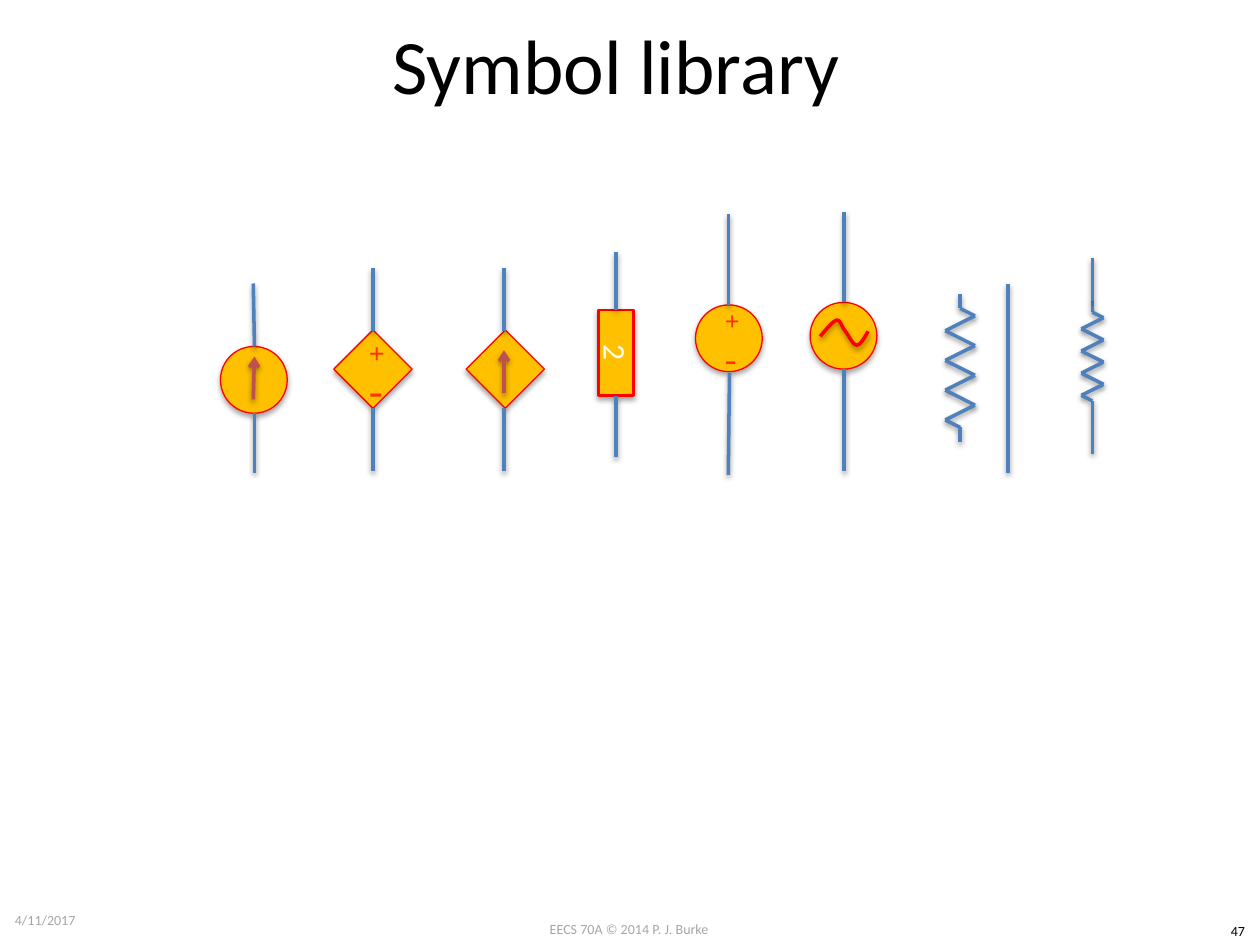
"""Build the slide showing a library of circuit symbols."""
import itertools

import lxml.etree
import pptx
import pptx.dml.color
import pptx.enum.shapes
import pptx.enum.text
import pptx.oxml.ns
import pptx.util

Inches = pptx.util.Inches
Pt = pptx.util.Pt
SHAPE = pptx.enum.shapes.MSO_SHAPE
ALIGN = pptx.enum.text.PP_ALIGN
ANCHOR = pptx.enum.text.MSO_ANCHOR
qn = pptx.oxml.ns.qn

COLORS = {
    "black": "000000", "grey": "A6A6A6", "white": "FFFFFF", "body": "FFC000",
    "outline": "FF0000", "sign": "FF3300", "lead": "4F81BD", "current": "C0504D",
}
BODIES = {
    "circle": (SHAPE.OVAL, 0.53, 0.53, 0, 0.75),
    "diamond": (SHAPE.RECTANGLE, 0.44, 0.44, 45, 0.75),
    "box": (SHAPE.RECTANGLE, 0.68, 0.28, 90, 1.5),
}
SYMBOLS = [
    {"body": "circle", "center": (2.015, 3.015),
     "arrow": (2.01, 3.17, 2.02, 2.83),
     "leads": [(2.01, 2.25, 2.02, 2.75), (2.02, 3.75, 2.02, 3.28)]},
    {"body": "diamond", "center": (2.96, 2.93),
     "signs": [("+", 2.63, 16, True), ("-", 2.92, 24, False)],
     "leads": [(2.96, 2.13, 2.96, 2.63), (2.96, 3.74, 2.96, 3.24)]},
    {"body": "diamond", "center": (4.01, 2.93),
     "arrow": (4, 3.12, 4, 2.78),
     "leads": [(4, 2.13, 4, 2.63), (4, 3.74, 4, 3.24)]},
    {"body": "circle", "center": (5.785, 2.685),
     "signs": [("+", 2.38, 14.8, True), ("-", 2.67, 20, False)],
     "leads": [(5.78, 1.7, 5.78, 2.42), (5.78, 3.77, 5.79, 2.96)]},
    {"body": "circle", "center": (6.695, 2.665),
     "wave": [(6.51, 2.67), (6.56, 2.61), (6.61, 2.55), (6.64, 2.54),
              (6.67, 2.53), (6.68, 2.6), (6.71, 2.63),
              (6.74, 2.67), (6.77, 2.74), (6.8, 2.74),
              (6.83, 2.74), (6.86, 2.68), (6.89, 2.63)],
     "leads": [(6.7, 1.68, 6.7, 2.4), (6.7, 3.74, 6.7, 2.93)]},
    {"resistor": (7.62, 2.33, 1.18), "leads": []},
    {"body": "box", "center": (4.89, 2.8), "label": "2", "joins": (1, 3),
     "leads": [(4.89, 2, 4.89, 2.46), (4.89, 3.63, 4.89, 3.14)]},
    {"resistor": (8.67, 2.39, 0.88),
     "leads": [(8.67, 2.05, 8.67, 2.39), (8.67, 3.6, 8.67, 3.27)]},
]
WIRE = (8, 3.75, 8, 2.25)
CAPTIONS = [
    ("EECS 70A © 2014 P. J. Burke", (3.83, 7.26, 2.33, 0.24), 8, "grey", ALIGN.CENTER, ANCHOR.TOP),
    ("47", (9.65, 7.27, 0.35, 0.24), 8, "black", ALIGN.CENTER, ANCHOR.TOP),
    ("Symbol library", (0.39, -0.12, 9, 1.25), 44, "black", ALIGN.CENTER, ANCHOR.MIDDLE),
    ("4/11/2017", (0.02, 7.1, 2.33, 0.4), 8, "grey", ALIGN.LEFT, ANCHOR.MIDDLE),
]


def rgb(name):
    return pptx.dml.color.RGBColor.from_string(COLORS[name])


def add_shadow(part, alpha, distance):
    properties = part._element.spPr
    effects = properties.find(qn("a:effectLst"))
    if effects is None:
        effects = lxml.etree.SubElement(properties, qn("a:effectLst"))
    shadow = lxml.etree.SubElement(
        effects, qn("a:outerShdw"), blurRad=str(Pt(3.1)),
        dist=str(Pt(distance)), dir="5400000", rotWithShape="0")
    tint = lxml.etree.SubElement(shadow, qn("a:srgbClr"), val=COLORS["black"])
    lxml.etree.SubElement(tint, qn("a:alpha"), val=str(alpha * 1000))


def write(part, text, size, color, font="Calibri", align=ALIGN.CENTER,
          anchor=ANCHOR.MIDDLE, bold=False):
    frame = part.text_frame
    frame.word_wrap = True
    frame.vertical_anchor = anchor
    paragraph = frame.paragraphs[0]
    paragraph.text = text
    paragraph.alignment = align
    paragraph.font.name = font
    paragraph.font.size = Pt(size)
    paragraph.font.bold = bold
    paragraph.font.color.rgb = rgb(color)


def add_line(shapes, ends, color="lead", arrow=False, body=None, site=None):
    x1, y1, x2, y2 = map(Inches, ends)
    line = shapes.add_connector(pptx.enum.shapes.MSO_CONNECTOR.STRAIGHT, x1, y1, x2, y2)
    if site is not None:
        line.end_connect(body, site)
        line.end_x, line.end_y = x2, y2
    line.line.color.rgb = rgb(color)
    line.line.width = Pt(2)
    if arrow:
        lxml.etree.SubElement(line.line._get_or_add_ln(), qn("a:tailEnd"), type="arrow")
    add_shadow(line, 38, 1.6)


def add_body(shapes, kind, center):
    preset, width, height, rotation, outline = BODIES[kind]
    x, y = center
    body = shapes.add_shape(preset, Inches(x - width / 2), Inches(y - height / 2),
                            Inches(width), Inches(height))
    body.rotation = rotation
    body.fill.solid()
    body.fill.fore_color.rgb = rgb("body")
    body.line.color.rgb = rgb("outline")
    body.line.width = Pt(outline)
    body.shadow.inherit = False
    add_shadow(body, 35, 1.8)
    return body


def add_wave(shapes, points):
    start, *rest = [(Inches(x), Inches(y)) for x, y in points]
    builder = shapes.build_freeform(*start)
    builder.add_line_segments(rest, close=False)
    wave = builder.convert_to_shape()
    outline = wave._element.find(".//" + qn("a:path"))
    segments = outline.findall(qn("a:lnTo"))
    for first in range(0, len(segments), 3):
        curve = lxml.etree.SubElement(outline, qn("a:cubicBezTo"))
        for segment in segments[first:first + 3]:
            curve.append(segment[0])
            outline.remove(segment)
    wave.fill.background()
    wave.line.color.rgb = rgb("outline")
    wave.line.width = Pt(2)
    wave.shadow.inherit = False
    add_shadow(wave, 38, 1.6)


def add_resistor(shapes, x, top, length):
    step = length / 10
    turns = [(x + step * (-1) ** i, top + step * (1.5 + i)) for i in range(8)]
    corners = [(x, top), (x, top + step), *turns, (x, top + 9 * step), (x, top + length)]
    for start, end in itertools.pairwise(corners):
        add_line(shapes, start + end)


def add_symbol(slide, symbol):
    shapes = slide.shapes.add_group_shape().shapes
    body = None
    if "body" in symbol:
        body = add_body(shapes, symbol["body"], symbol["center"])
    if "label" in symbol:
        write(body, symbol["label"], 18, "white")
    for sign, top, size, bold in symbol.get("signs", []):
        box = shapes.add_textbox(Inches(symbol["center"][0] - 0.13), Inches(top),
                                 Inches(0.26), Inches(0.33))
        write(box, sign, size, "sign", "Times New Roman", bold=bold)
    if "wave" in symbol:
        add_wave(shapes, symbol["wave"])
    if "resistor" in symbol:
        add_resistor(shapes, *symbol["resistor"])
    if "arrow" in symbol:
        add_line(shapes, symbol["arrow"], "current", arrow=True)
    for lead, site in zip(symbol["leads"], symbol.get("joins", (None, None))):
        add_line(shapes, lead, body=body, site=site)


def main():
    deck = pptx.Presentation()
    deck.slide_width, deck.slide_height = Inches(10), Inches(7.5)
    slide = deck.slides.add_slide(deck.slide_layouts[6])
    for text, place, size, color, align, anchor in CAPTIONS:
        caption = slide.shapes.add_textbox(*map(Inches, place))
        write(caption, text, size, color, align=align, anchor=anchor)
    for symbol in SYMBOLS:
        add_symbol(slide, symbol)
    add_line(slide.shapes, WIRE)
    deck.save("out.pptx")


if __name__ == "__main__":
    main()
